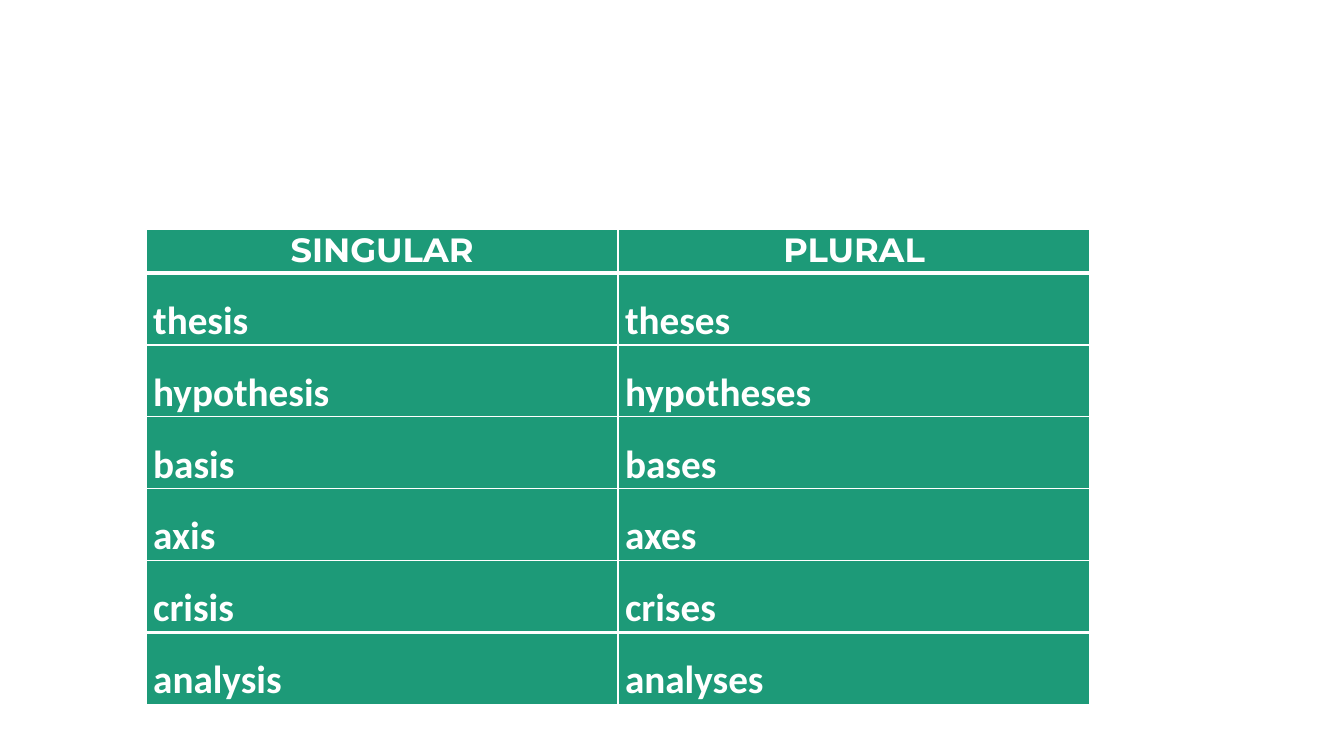
import pptx
import pptx.util
import pptx.oxml
import pptx.dml.color
import pptx.enum.text
from pptx.oxml import ns

COLORS = {"green": "1D9A78", "white": "FFFFFF"}
NOUNS = [
    ("SINGULAR", "PLURAL"),
    ("thesis", "theses"),
    ("hypothesis", "hypotheses"),
    ("basis", "bases"),
    ("axis", "axes"),
    ("crisis", "crises"),
    ("analysis", "analyses"),
]
HEADER_H, ROW_H, COL_W = 0.43, 0.65, 4.68
THIN, THICK = 1, 3
LAST = len(NOUNS) - 1


def write(cell, text, font, size, align, spacing):
    p = cell.text_frame.paragraphs[0]
    p.alignment = align
    p.line_spacing = spacing
    r = p.add_run()
    r.text = text
    r.font.name = font
    r.font.size = pptx.util.Pt(size)
    r.font.bold = True
    r.font.color.rgb = pptx.dml.color.RGBColor.from_string(COLORS["white"])


def add_border(cell, side, width):
    """Draw one white cell edge; side is L, R, T or B."""
    cell._tc.get_or_add_tcPr().append(pptx.oxml.parse_xml(
        f'<a:ln{side} {ns.nsdecls("a")} w="{pptx.util.Pt(width)}"><a:solidFill>'
        f'<a:srgbClr val="{COLORS["white"]}"/></a:solidFill></a:ln{side}>'))


prs = pptx.Presentation()
prs.slide_width = pptx.util.Inches(13.33)
prs.slide_height = pptx.util.Inches(7.5)
s = prs.slides.add_slide(prs.slide_layouts[6])

table = s.shapes.add_table(
    len(NOUNS), 2, pptx.util.Inches(1.45), pptx.util.Inches(2.28),
    pptx.util.Inches(2 * COL_W), pptx.util.Inches(HEADER_H + LAST * ROW_H)).table
table.horz_banding = False
for col in table.columns:
    col.width = pptx.util.Inches(COL_W)

for i, nouns in enumerate(NOUNS):
    table.rows[i].height = pptx.util.Inches(ROW_H if i else HEADER_H)
    # Thick rules lie under the header and above the last row.
    top = THICK if i in (1, LAST) else THIN
    bottom = THICK if i in (0, LAST - 1) else THIN
    for j, noun in enumerate(nouns):
        cell = table.cell(i, j)
        cell.margin_left = cell.margin_right = pptx.util.Inches(0.07)
        cell.margin_top = cell.margin_bottom = 0
        for side, width in zip("LRTB", (THIN, THIN, top, bottom)):
            add_border(cell, side, width)
        cell.fill.solid()
        cell.fill.fore_color.rgb = pptx.dml.color.RGBColor.from_string(COLORS["green"])
        if i == 0:
            write(cell, noun, font="Montserrat", size=24,
                  align=pptx.enum.text.PP_ALIGN.CENTER, spacing=1.0)
        else:
            write(cell, noun, font="Calibri", size=28,
                  align=pptx.enum.text.PP_ALIGN.LEFT, spacing=1.5)

prs.save("out.pptx")
